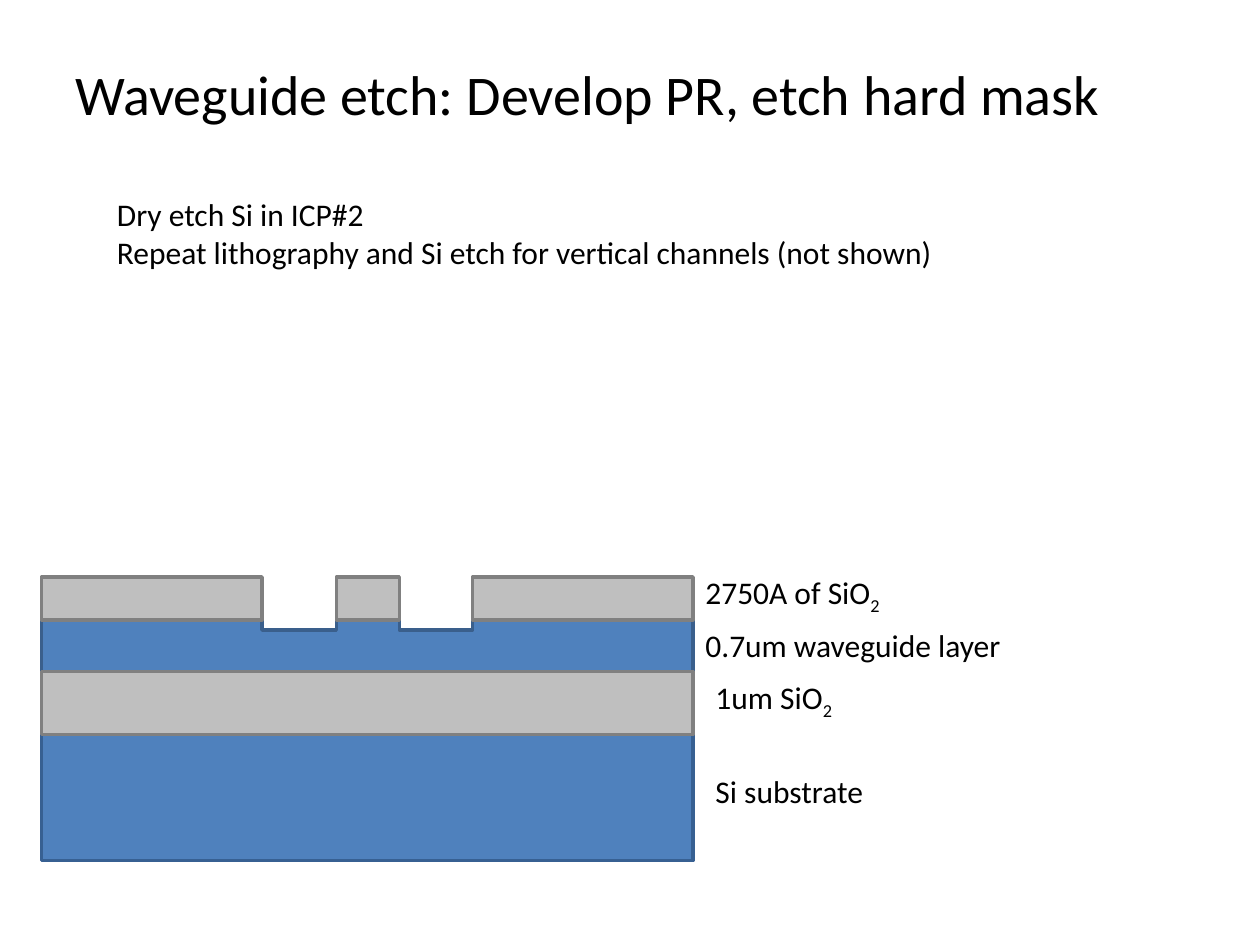
from dataclasses import dataclass
from pptx import Presentation
from pptx.dml.color import RGBColor as RGB
from pptx.enum.shapes import MSO_SHAPE as Shape
from pptx.enum.text import MSO_AUTO_SIZE as Fit
from pptx.util import Inches, Pt


@dataclass(frozen=True)
class Theme:
    font: str = "Calibri"
    title: int = 32
    body: int = 18
    edge: int = 2
    text: RGB = RGB(0, 0, 0)
    # Each material has a fill and a line colour
    guide: tuple = (RGB(0x4F, 0x81, 0xBD), RGB(0x3A, 0x5F, 0x8C))
    base: tuple = (RGB(0x4F, 0x81, 0xBD), RGB(0x37, 0x60, 0x92))
    oxide: tuple = (RGB(0xBF, 0xBF, 0xBF), RGB(0x80, 0x80, 0x80))


THEME = Theme()
LEFT, RIGHT = 0.33, 5.5
MASK_TOP, GUIDE_TOP, TRENCH = 4.58, 4.92, 5
OXIDE_TOP, BASE_TOP, BASE_END = 5.33, 5.83, 6.83
MASKS = [(LEFT, 2.08), (2.67, 3.17), (3.75, RIGHT)]


def paint(shape, look):
    fill, edge = look
    shape.shadow.inherit = False
    shape.fill.solid()
    shape.fill.fore_color.rgb = fill
    shape.line.color.rgb = edge
    shape.line.width = Pt(THEME.edge)


def add_layer(slide, left, right, top, end, look):
    box = slide.shapes.add_shape(Shape.RECTANGLE, Inches(left), Inches(top),
                                 Inches(right - left), Inches(end - top))
    paint(box, look)


def add_guide(slide):
    """Draw the waveguide layer, with a trench between each pair of masks."""
    points = [(LEFT, GUIDE_TOP)]
    for (_, start), (stop, _) in zip(MASKS, MASKS[1:]):
        points += [(start, GUIDE_TOP), (start, TRENCH),
                   (stop, TRENCH), (stop, GUIDE_TOP)]
    points += [(RIGHT, GUIDE_TOP), (RIGHT, OXIDE_TOP), (LEFT, OXIDE_TOP)]
    spots = [(Inches(x), Inches(y)) for x, y in points]
    pen = slide.shapes.build_freeform(*spots[0])
    pen.add_line_segments(spots[1:], close=True)
    paint(pen.convert_to_shape(), THEME.guide)


def add_text(slide, left, top, width, height, lines, size=THEME.body,
             sub="", wrap=False):
    """Write lines of text, the last one ending in the subscript sub."""
    box = slide.shapes.add_textbox(Inches(left), Inches(top),
                                   Inches(width), Inches(height))
    frame = box.text_frame
    frame.word_wrap = wrap
    frame.auto_size = Fit.SHAPE_TO_FIT_TEXT
    frame.text = "\n".join(lines)
    if sub:
        run = frame.paragraphs[-1].add_run()
        run.text = sub
        run.font._element.set("baseline", "-25000")
    for para in frame.paragraphs:
        para.font.name = THEME.font
        para.font.size = Pt(size)
        para.font.color.rgb = THEME.text


def main():
    deck = Presentation()
    deck.slide_width, deck.slide_height = Inches(10), Inches(7.5)
    slide = deck.slides.add_slide(deck.slide_layouts[6])

    add_guide(slide)
    add_layer(slide, LEFT, RIGHT, BASE_TOP, BASE_END, THEME.base)
    add_layer(slide, LEFT, RIGHT, OXIDE_TOP, BASE_TOP, THEME.oxide)

    add_text(slide, 0.5, 0.42, 8.83, 0.64,
             ["Waveguide etch: Develop PR, etch hard mask"],
             size=THEME.title, wrap=True)
    labels = [
        (5.5, 4.5, 1.65, "2750A of SiO", "2"),
        (5.5, 4.92, 2.57, "0.7um waveguide layer", ""),
        (5.58, 5.33, 1.19, "1um SiO", "2"),
        (5.58, 6.08, 1.38, "Si substrate", ""),
    ]
    for left, top, width, text, sub in labels:
        add_text(slide, left, top, width, 0.4, [text], sub=sub)
    add_text(slide, 0.83, 1.5, 6.75, 0.71, [
        "Dry etch Si in ICP#2",
        "Repeat lithography and Si etch for vertical channels (not shown)",
    ])

    for left, right in MASKS:
        add_layer(slide, left, right, MASK_TOP, GUIDE_TOP, THEME.oxide)
    deck.save("out.pptx")


if __name__ == "__main__":
    main()
